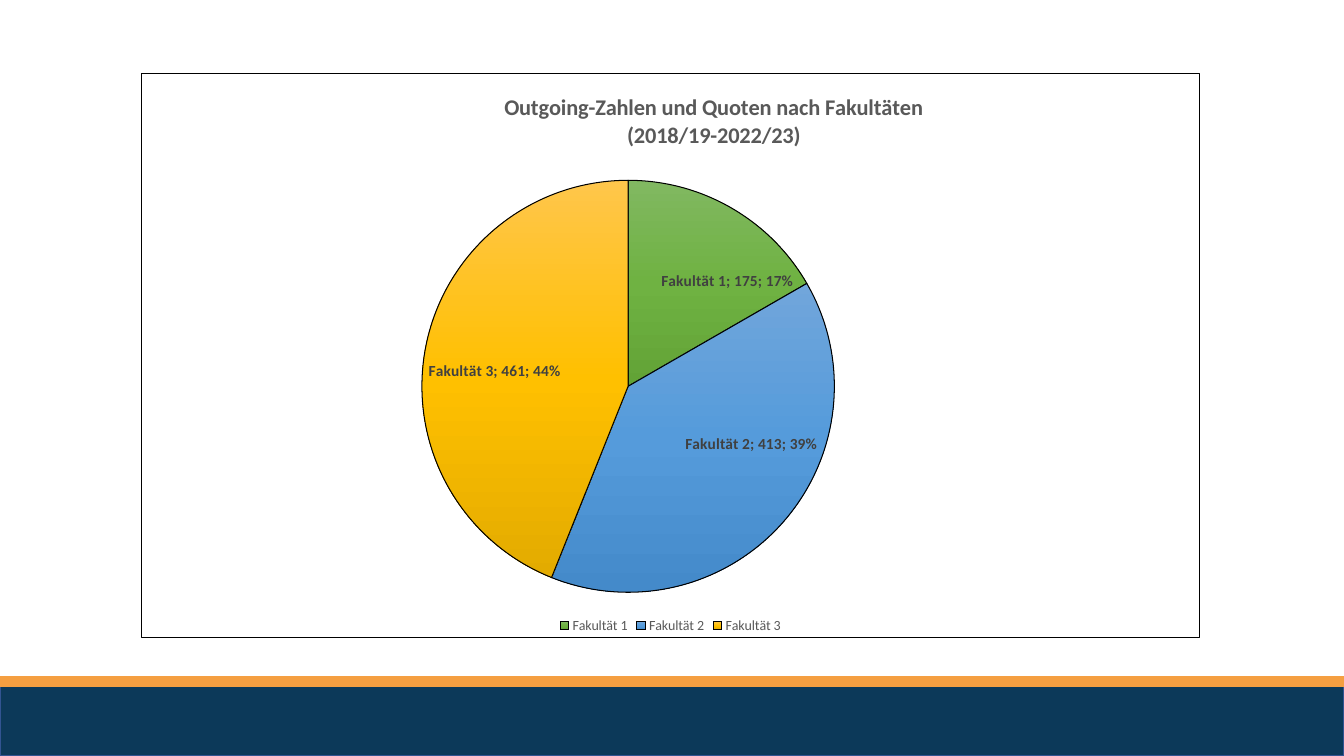
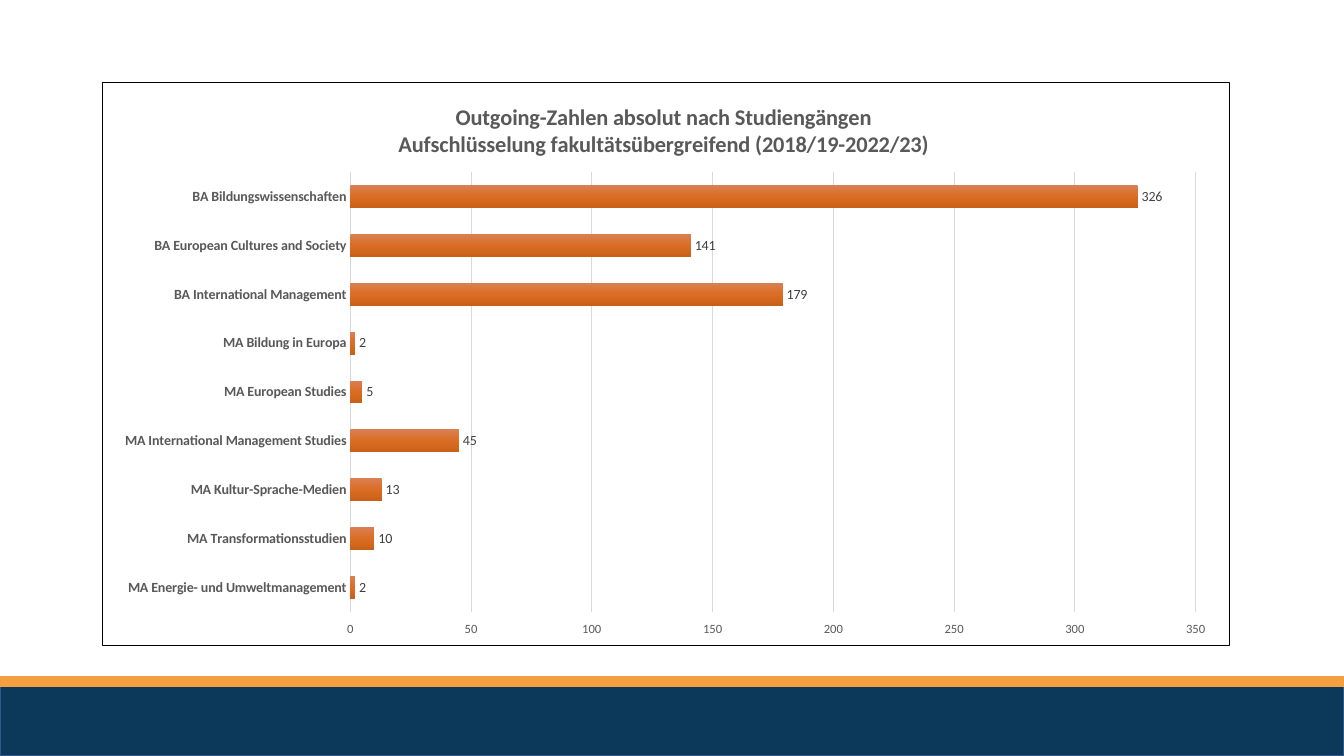
from copy import deepcopy

from lxml.etree import SubElement
from pptx import Presentation
from pptx.chart.data import CategoryChartData
from pptx.dml.color import RGBColor
from pptx.enum.chart import (XL_CHART_TYPE, XL_LABEL_POSITION, XL_LEGEND_POSITION,
                             XL_TICK_LABEL_POSITION, XL_TICK_MARK)
from pptx.enum.shapes import MSO_CONNECTOR, MSO_SHAPE
from pptx.oxml import parse_xml
from pptx.oxml.ns import nsdecls, qn
from pptx.util import Inches, Pt

# Content
FACULTIES = [("Fakultät 1", 175), ("Fakultät 2", 413), ("Fakultät 3", 461)]
FACULTY_TITLE = ["Outgoing-Zahlen und Quoten nach Fakultäten", "(2018/19-2022/23)"]
PROGRAMMES = [
    ("BA Bildungswissenschaften", 326),
    ("BA European Cultures and Society", 141),
    ("BA International Management", 179),
    ("MA Bildung in Europa", 2),
    ("MA European Studies", 5),
    ("MA International Management Studies", 45),
    ("MA Kultur-Sprache-Medien", 13),
    ("MA Transformationsstudien", 10),
    ("MA Energie- und Umweltmanagement", 2),
]
PROGRAMME_TITLE = ["Outgoing-Zahlen absolut nach Studiengängen",
                   "Aufschlüsselung fakultätsübergreifend (2018/19-2022/23)"]

# Shared style
FONT = "Calibri"
NAVY = RGBColor(0x0C, 0x39, 0x59)
NAVY_EDGE = RGBColor(0x32, 0x54, 0x91)
ORANGE = RGBColor(0xF5, 0x9F, 0x41)
BLACK = RGBColor(0, 0, 0)
GREY = RGBColor(0x59, 0x59, 0x59)
LABEL_GREY = RGBColor(0x40, 0x40, 0x40)
GRID_GREY = RGBColor(0xD9, 0xD9, 0xD9)


def shades(*codes):
    return [RGBColor.from_string(code) for code in codes]


PIE_SHADES = [shades("81B861", "6FB242", "62A336"),
              shades("71A6DB", "559BDB", "448ACA"),
              shades("FFC64B", "FFC000", "E3AB00")]
BAR_SHADES = shades("D98054", "DB6D23", "CA6018")


def set_font(font, size, color, bold=False):
    font.name, font.size, font.bold = FONT, Pt(size), bold
    font.color.rgb = color


def set_line(line, color, width):
    line.color.rgb = color
    line.width = Pt(width)


def fill_gradient(fmt, colors):
    """Run evenly spaced colours from top to bottom."""
    fmt.fill.gradient()
    fmt.fill.gradient_angle = 270
    stops = fmt._element.xpath(".//a:gsLst")[0]
    while len(stops) < len(colors):
        stops.append(deepcopy(stops[0]))
    for i, (stop, color) in enumerate(zip(fmt.fill.gradient_stops, colors)):
        stop.position = i / (len(colors) - 1)
        stop.color.rgb = color


def set_layout(parent, index, inner=False, **parts):
    """Place a chart part by fractions of the chart's size."""
    for old in parent.findall(qn("c:layout")):
        parent.remove(old)
    layout = parse_xml(f"<c:layout {nsdecls('c')}><c:manualLayout/></c:layout>")
    if inner:
        SubElement(layout[0], qn("c:layoutTarget"), val="inner")
    for key in "xy":
        SubElement(layout[0], qn(f"c:{key}Mode"), val="edge")
    for key, value in parts.items():
        SubElement(layout[0], qn(f"c:{key}"), val=str(value))
    parent.insert(index, layout)


def add_footer_band(prs, s):
    """Draw the band, then move it to the master so all slides share it."""
    top = Inches(6.76)
    band = s.shapes.add_shape(MSO_SHAPE.RECTANGLE, 0, top, prs.slide_width,
                              prs.slide_height - top)
    band.shadow.inherit = False
    band.fill.solid()
    band.fill.fore_color.rgb = NAVY
    set_line(band.line, NAVY_EDGE, 1)
    stripe = s.shapes.add_connector(MSO_CONNECTOR.STRAIGHT, 0, top,
                                    prs.slide_width, top)
    set_line(stripe.line, ORANGE, 8)
    SubElement(stripe._element.spPr, qn("a:effectLst"))
    for shape in (band, stripe):
        prs.slide_master.shapes._spTree.append(shape._element)


def add_framed_chart(s, kind, rows, title, box, title_at, plot_at):
    data = CategoryChartData()
    data.categories = [name for name, _ in rows]
    data.add_series("Series 1", [value for _, value in rows])
    chart = s.shapes.add_chart(kind, *map(Inches, box), data).chart
    set_font(chart.font, 10, BLACK)

    # Frame
    frame = parse_xml(
        f'<c:spPr {nsdecls("c", "a")}><a:noFill/><a:ln w="{Pt(0.75)}"><a:solidFill>'
        f'<a:srgbClr val="{BLACK}"/></a:solidFill></a:ln></c:spPr>')
    chart._chartSpace.find(qn("c:txPr")).addprevious(frame)

    # Title
    chart.has_title = True
    tf = chart.chart_title.text_frame
    tf.text = "\n".join(title)
    for p in tf.paragraphs:
        set_font(p.font, 16, GREY, True)
    set_layout(chart.chart_title._element, 1, **title_at)
    set_layout(chart._chartSpace.chart.plotArea, 0, inner=True, **plot_at)
    return chart


def add_faculty_pie(s):
    chart = add_framed_chart(
        s, XL_CHART_TYPE.PIE, FACULTIES, FACULTY_TITLE, (1.4, 0.72, 10.5, 5.61),
        dict(x=0.34, y=0.03), dict(x=0.26, y=0.19, w=0.4, h=0.73))
    chart.has_legend = True
    chart.legend.position = XL_LEGEND_POSITION.BOTTOM
    chart.legend.include_in_layout = False
    set_font(chart.legend.font, 10, GREY)
    series = chart.plots[0].series[0]
    for i, colors in enumerate(PIE_SHADES):
        fmt = series.points[i].format
        fill_gradient(fmt, colors)
        set_line(fmt.line, BLACK, 0.75)
    labels = series.data_labels
    labels.show_category_name = labels.show_value = labels.show_percentage = True
    labels.position = XL_LABEL_POSITION.BEST_FIT
    set_font(labels.font, 11, LABEL_GREY, True)


def add_programme_bars(s):
    chart = add_framed_chart(
        s, XL_CHART_TYPE.BAR_CLUSTERED, PROGRAMMES, PROGRAMME_TITLE,
        (1.01, 0.81, 11.19, 5.6),
        dict(x=0.26, y=0.03), dict(x=0.22, y=0.16, w=0.75, h=0.78))
    chart.has_legend = False
    plot = chart.plots[0]
    plot.vary_by_categories = False
    plot.gap_width, plot.overlap = 115, -20
    series = plot.series[0]
    fill_gradient(series.format, BAR_SHADES)
    labels = series.data_labels
    labels.show_value = True
    labels.position = XL_LABEL_POSITION.OUTSIDE_END
    set_font(labels.font, 10, LABEL_GREY)

    # Axes: the first programme is on top, the numbers stay at the bottom
    names, values = chart.category_axis, chart.value_axis
    for axis in (names, values):
        axis.major_tick_mark = axis.minor_tick_mark = XL_TICK_MARK.NONE
    names.reverse_order = True
    values.tick_label_position = XL_TICK_LABEL_POSITION.HIGH
    set_font(names.tick_labels.font, 10, GREY, True)
    set_line(names.format.line, GRID_GREY, 1)
    values.minimum_scale, values.maximum_scale, values.major_unit = 0, 350, 50
    set_font(values.tick_labels.font, 9, GREY)
    values.format.line.fill.background()
    set_line(values.major_gridlines.format.line, GRID_GREY, 0.75)


def main():
    prs = Presentation()
    prs.slide_width, prs.slide_height = Inches(13.33), Inches(7.5)
    blank = prs.slide_layouts[6]
    pie_slide, bar_slide = (prs.slides.add_slide(blank) for _ in range(2))
    add_footer_band(prs, pie_slide)
    add_faculty_pie(pie_slide)
    add_programme_bars(bar_slide)
    prs.save("out.pptx")


if __name__ == "__main__":
    main()
